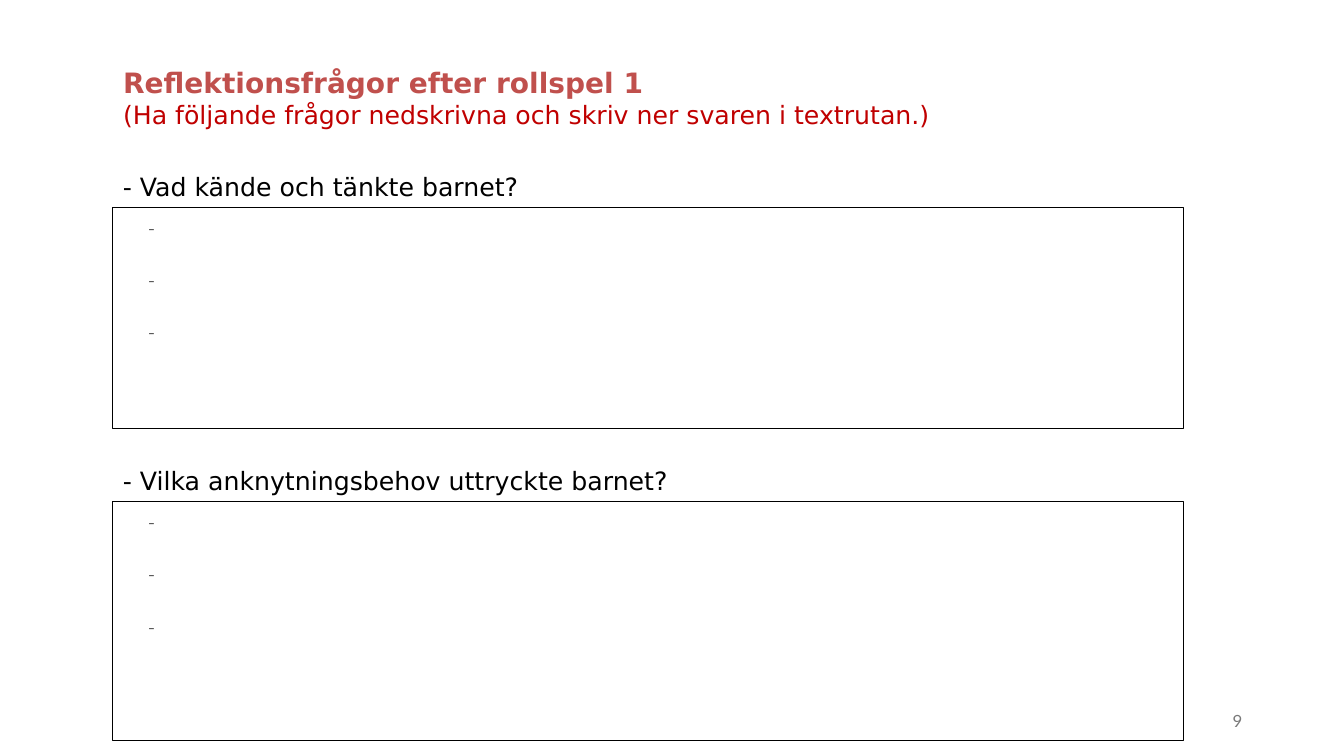
from dataclasses import dataclass

from lxml.etree import SubElement
from pptx import Presentation
from pptx.dml.color import RGBColor
from pptx.enum.text import MSO_ANCHOR as Anchor, MSO_AUTO_SIZE as AutoSize, PP_ALIGN as Align
from pptx.oxml.ns import qn
from pptx.shapes.base import BaseShape
from pptx.slide import Slide
from pptx.text.text import TextFrame, _Paragraph as Paragraph
from pptx.util import Emu, Pt

PX = 9144


@dataclass(frozen=True)
class Style:
    font: str
    size: int
    color: str
    bold: bool = False


@dataclass(frozen=True)
class Theme:
    heading: Style = Style("DejaVu Sans", 20, "C0504D", True)
    hint: Style = Style("DejaVu Sans", 18, "C00000")
    question: Style = Style("DejaVu Sans", 18, "000000")
    answer: Style = Style("Cambria", 15, "595959")
    number: Style = Style("Lato", 12, "797979")
    paper: str = "FFFFFF"
    border: str = "000000"


@dataclass(frozen=True)
class Box:
    left: int
    top: int
    width: int
    height: int


@dataclass(frozen=True)
class Question:
    text: str
    top: int
    answer_height: int


THEME = Theme()
LEFT = 112
LABEL_STEP = 41
ANSWER_LINES = 3
TITLE_BOX = Box(LEFT, 60, 1129, 74)
NUMBER_BOX = Box(942, 695, 300, 40)
QUESTIONS = [
    Question("- Vad kände och tänkte barnet?", 165, 219),
    Question("- Vilka anknytningsbehov uttryckte barnet?", 457, 237),
]


def px(n: int) -> Emu:
    return Emu(n * PX)


def place(sp: BaseShape, box: Box) -> None:
    sp.left, sp.top = px(box.left), px(box.top)
    sp.width, sp.height = px(box.width), px(box.height)


def setup(tf: TextFrame, anchor: Anchor = Anchor.TOP) -> None:
    tf.word_wrap = True
    tf.auto_size = AutoSize.NONE
    tf.vertical_anchor = anchor


def add_run(p: Paragraph, text: str, style: Style, align: Align = Align.LEFT) -> None:
    p.alignment = align
    r = p.add_run()
    r.text = text
    r.font.name = style.font
    r.font.size = Pt(style.size)
    r.font.bold = style.bold
    r.font.color.rgb = RGBColor.from_string(style.color)


def next_paragraph(tf: TextFrame, index: int) -> Paragraph:
    return tf.add_paragraph() if index else tf.paragraphs[0]


def add_title(s: Slide) -> None:
    sp = s.shapes.title
    place(sp, TITLE_BOX)
    tf = sp.text_frame
    setup(tf)
    lines = [
        ("Reflektionsfrågor efter rollspel 1", THEME.heading),
        ("(Ha följande frågor nedskrivna och skriv ner svaren i textrutan.)", THEME.hint),
    ]
    for i, (text, style) in enumerate(lines):
        add_run(next_paragraph(tf, i), text, style)


def add_label(s: Slide, box: Box, text: str, style: Style,
              align: Align = Align.LEFT, anchor: Anchor = Anchor.TOP) -> None:
    sp = s.shapes.add_textbox(0, 0, 0, 0)
    place(sp, box)
    setup(sp.text_frame, anchor)
    add_run(sp.text_frame.paragraphs[0], text, style, align)


def fill_answer(sp: BaseShape, box: Box) -> None:
    place(sp, box)
    sp.fill.solid()
    sp.fill.fore_color.rgb = RGBColor.from_string(THEME.paper)
    sp.line.color.rgb = RGBColor.from_string(THEME.border)
    sp.line.width = Pt(0.75)
    tf = sp.text_frame
    setup(tf)
    for i in range(ANSWER_LINES):
        p = next_paragraph(tf, i)
        add_run(p, "-", THEME.answer)
        p.line_spacing = 1.07
        p.space_before, p.space_after = Pt(12), Pt(6)
        props = p._p.get_or_add_pPr()
        props.set("marL", str(px(50)))
        props.set("indent", str(px(-25)))
        SubElement(props, qn("a:buNone"))


def main() -> None:
    prs = Presentation()
    prs.slide_width, prs.slide_height = px(1333), px(750)
    s = prs.slides.add_slide(prs.slide_layouts.get_by_name("Two Content"))
    add_title(s)
    for idx, q in enumerate(QUESTIONS, 1):
        add_label(s, Box(LEFT, q.top, 667, 40), q.text, THEME.question)
        fill_answer(s.placeholders[idx], Box(LEFT, q.top + LABEL_STEP, 1062, q.answer_height))
    add_label(s, NUMBER_BOX, "9", THEME.number, Align.RIGHT, Anchor.MIDDLE)
    prs.save("out.pptx")


if __name__ == "__main__":
    main()
